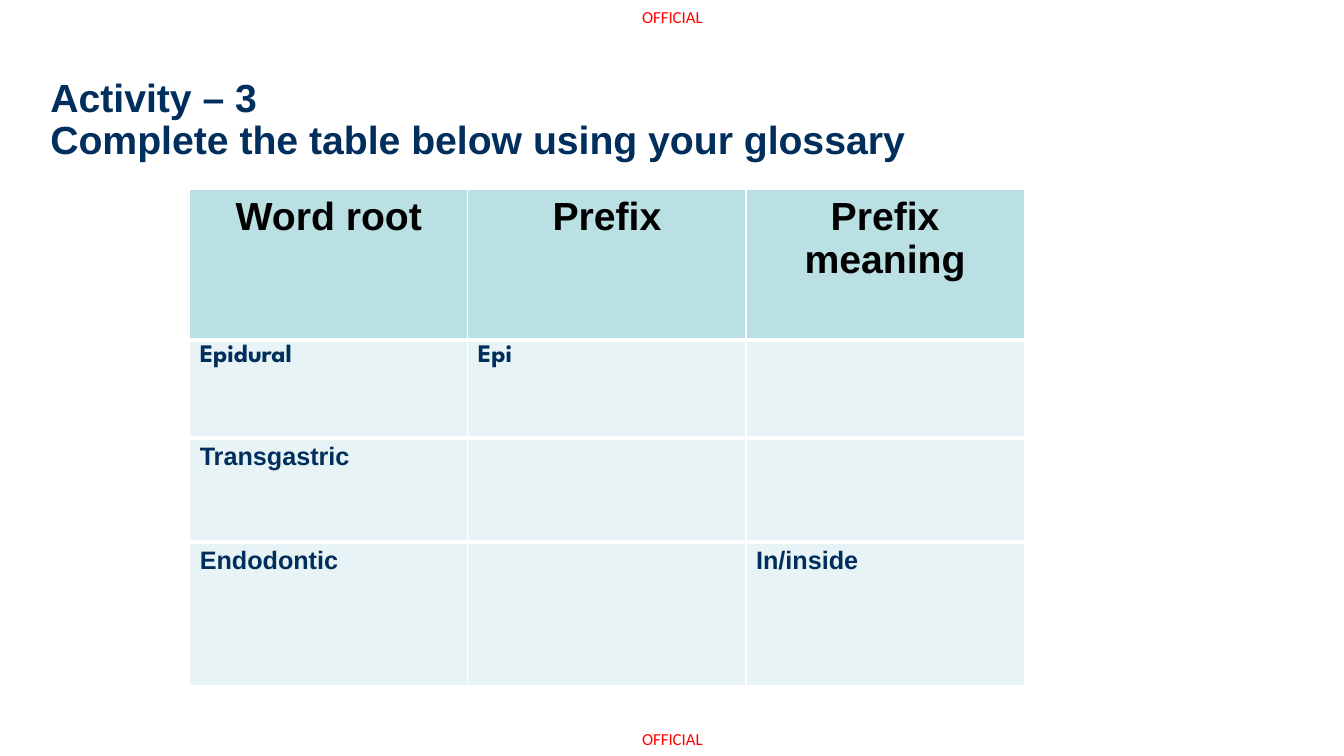
"""Build the Activity 3 glossary table slide."""
import pptx
import pptx.dml.color
import pptx.enum.text
import pptx.oxml
import pptx.oxml.ns
import pptx.util

Cm = pptx.util.Cm
Pt = pptx.util.Pt
ALIGN = pptx.enum.text.PP_ALIGN


def colour(value):
    """Turn a hex string into a colour."""
    return pptx.dml.color.RGBColor.from_string(value)


class ActivitySlide:
    """Hold the slide and its style, and draw each kind of element."""

    navy, red, black, white = "002E5D", "FF0000", "000000", "FFFFFF"
    header_fill, body_fill = "BBE0E3", "E7F3F4"
    font = "Arial"

    def __init__(self, presentation):
        """Add a blank slide."""
        self.slide = presentation.slides.add_slide(presentation.slide_layouts[6])

    def style(self, frame, size, ink, font=font, bold=True):
        """Format every run of a text frame."""
        for paragraph in frame.paragraphs:
            for run in paragraph.runs:
                run.font.size = Pt(size)
                run.font.name = font
                run.font.bold = bold
                run.font.color.rgb = colour(ink)

    def text(self, words, left, top, width, height, wrap=True):
        """Add a text box without margins and return its frame."""
        box = self.slide.shapes.add_textbox(Cm(left), Cm(top), Cm(width), Cm(height))
        frame = box.text_frame
        frame.margin_left = frame.margin_right = 0
        frame.margin_top = frame.margin_bottom = 0
        frame.word_wrap = wrap
        frame.paragraphs[0].text = words
        return frame

    def marking(self, top):
        """Add the protective marking at a given height."""
        frame = self.text("OFFICIAL", 16.18, top, 1.63, 0.51, wrap=False)
        self.style(frame, 12, self.red, "Calibri", bold=False)

    def title(self, words):
        """Add the heading."""
        frame = self.text(words, 1.27, 1.98, 22.02, 2.01)
        frame.paragraphs[0].line_spacing = 0.9
        self.style(frame, 28, self.navy)

    def borders(self, cell, top, bottom):
        """Give a cell white borders, with top and bottom widths in points."""
        properties = cell._tc.get_or_add_tcPr()
        for side, width in (("L", 1), ("R", 1), ("T", top), ("B", bottom)):
            properties.append(pptx.oxml.parse_xml(
                f'<a:ln{side} {pptx.oxml.ns.nsdecls("a")} w="{Pt(width)}">'
                f'<a:solidFill><a:srgbClr val="{self.white}"/></a:solidFill>'
                f'</a:ln{side}>'))

    def table(self, rows, heights, left, top, column_width, fonts):
        """Add a table whose first row is a header; fonts overrides by row."""
        columns = len(rows[0])
        grid = self.slide.shapes.add_table(
            len(rows), columns, Cm(left), Cm(top),
            Cm(column_width * columns), Cm(sum(heights))).table
        grid.first_row = grid.horz_banding = False
        for column in grid.columns:
            column.width = Cm(column_width)
        for index, (words, height) in enumerate(zip(rows, heights)):
            grid.rows[index].height = Cm(height)
            header, last = index == 0, index == len(rows) - 1
            for cell, word in zip(grid.rows[index].cells, words):
                self.borders(cell, 1 if header else 3, 1 if last else 3)
                cell.fill.solid()
                cell.fill.fore_color.rgb = colour(
                    self.header_fill if header else self.body_fill)
                if not word:
                    continue
                cell.text_frame.text = word
                if header:
                    cell.text_frame.paragraphs[0].alignment = ALIGN.CENTER
                self.style(cell.text_frame, 28 if header else 18,
                           self.black if header else self.navy,
                           fonts.get(index, self.font))


def main():
    """Build and save the presentation."""
    presentation = pptx.Presentation()
    presentation.slide_width = Cm(33.87)
    presentation.slide_height = Cm(19.05)
    activity = ActivitySlide(presentation)
    for top in (0.18, 18.36):
        activity.marking(top)
    activity.title("Activity – 3\nComplete the table below using your glossary")
    glossary = [
        ("Word root", "Prefix", "Prefix meaning"),
        ("Epidural", "Epi", ""),
        ("Transgastric", "", ""),
        ("Endodontic", "", "In/inside"),
    ]
    activity.table(glossary, (3.78, 2.47, 2.62, 3.63), 4.78, 4.78, 7.01,
                   {1: "League Spartan"})
    presentation.save("out.pptx")


if __name__ == "__main__":
    main()
